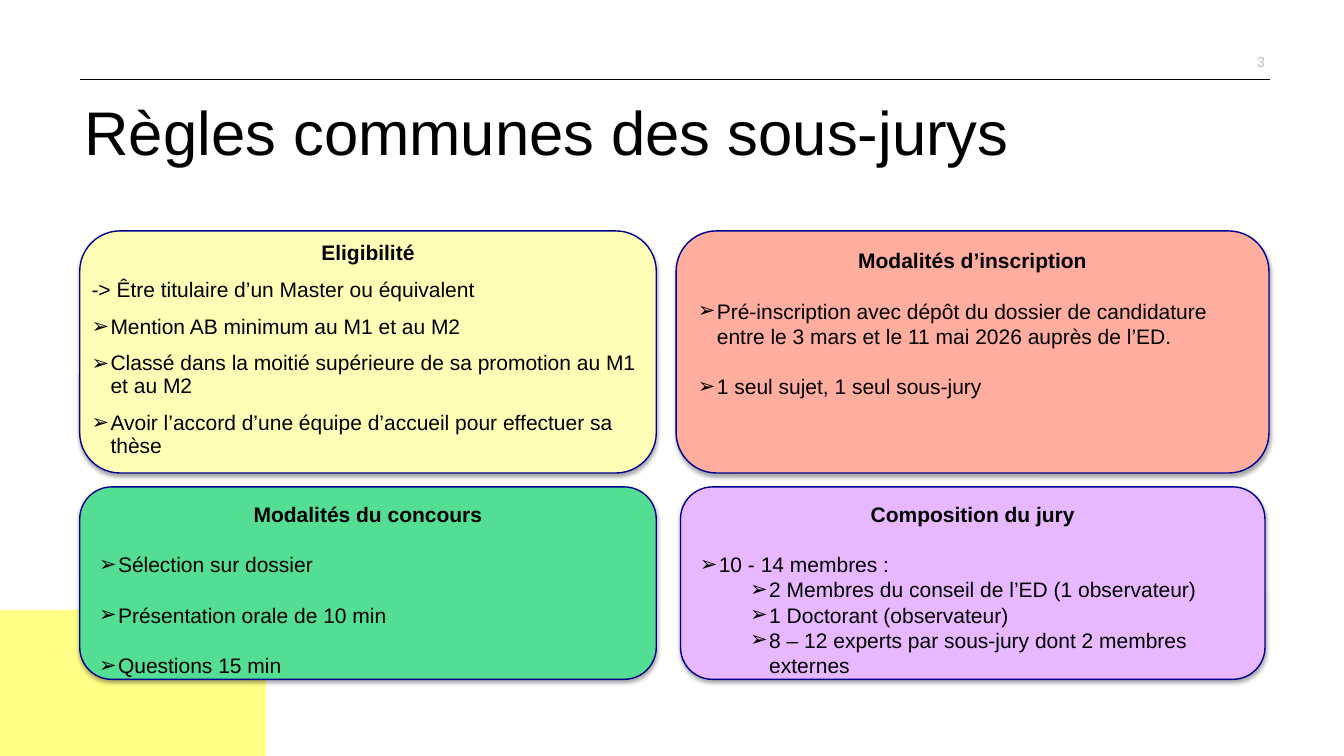
from lxml import etree
from pptx import Presentation
from pptx.dml.color import RGBColor
from pptx.enum.shapes import MSO_CONNECTOR as CONNECTOR, MSO_SHAPE as SHAPE
from pptx.enum.text import MSO_ANCHOR as ANCHOR, MSO_AUTO_SIZE as AUTO_SIZE, PP_ALIGN as ALIGN
from pptx.oxml.ns import qn
from pptx.util import Cm, Pt

INDENT = 0.48
LEVEL_STEP = 1.27
BLANK_LINE = 18


def color(hex_string):
    return RGBColor.from_string(hex_string)


def apply(target, values):
    for name, value in values.items():
        setattr(target, name, value)


def add_child(parent, tag, **attributes):
    return etree.SubElement(parent, qn(tag), attributes)


class SlideBuilder:
    font = "Arial"
    ink = "000000"
    outline = "00008E"
    text_size = 15

    def __init__(self, presentation):
        self.slide = presentation.slides.add_slide(presentation.slide_layouts[1])
        self.shapes = self.slide.shapes

    def place(self, shape, box):
        apply(shape, dict(zip(("left", "top", "width", "height"), map(Cm, box))))

    def frame(self, shape, inset=None, anchor=ANCHOR.TOP):
        frame = shape.text_frame
        apply(frame, dict(word_wrap=True, auto_size=AUTO_SIZE.NONE, vertical_anchor=anchor))
        if inset is not None:
            apply(frame, {f"margin_{side}": Cm(inset) for side in ("left", "top", "right", "bottom")})
        return frame

    def set_text(self, paragraph, text, size=text_size, ink=ink, bold=False,
                 align=ALIGN.LEFT, spacing=1.0, before=0):
        paragraph.text = text
        apply(paragraph, dict(alignment=align, line_spacing=spacing, space_before=Pt(before)))
        font = paragraph.runs[0].font
        apply(font, dict(name=self.font, size=Pt(size), bold=bold))
        font.color.rgb = color(ink)

    def bullet(self, paragraph, level):
        """Set the arrow bullet of a level, or none when level is None."""
        properties = paragraph._p.get_or_add_pPr()
        if level is None:
            properties.set("marL", "0")
            properties.set("indent", "0")
            add_child(properties, "a:buNone")
            return
        paragraph.level = level
        properties.set("marL", str(Cm(INDENT + level * LEVEL_STEP)))
        properties.set("indent", str(-Cm(INDENT)))
        add_child(properties, "a:buFont", typeface=self.font)
        add_child(properties, "a:buChar", char="➢")

    def title(self, text, box):
        shape = self.shapes.title
        self.place(shape, box)
        self.set_text(self.frame(shape, 0).paragraphs[0], text, size=44, spacing=0.9)

    def page_number(self, text, box):
        frame = self.frame(self.shapes.add_textbox(*map(Cm, box)), 0, ANCHOR.MIDDLE)
        self.set_text(frame.paragraphs[0], text, size=10.5, ink="BFBFBF", align=ALIGN.RIGHT)

    def rule(self, left, right, top):
        line = self.shapes.add_connector(CONNECTOR.STRAIGHT, Cm(left), Cm(top), Cm(right), Cm(top))
        line.line.color.rgb = color(self.ink)
        line.line.width = Pt(0.75)
        add_child(line._element.spPr, "a:effectLst")

    def block(self, box, fill):
        shape = self.shapes.add_shape(SHAPE.RECTANGLE, *map(Cm, box))
        shape.shadow.inherit = False
        shape.fill.solid()
        shape.fill.fore_color.rgb = color(fill)
        shape.line.fill.background()

    def decorate(self, shape, fill):
        shape.fill.solid()
        shape.fill.fore_color.rgb = color(fill)
        shape.line.color.rgb = color(self.outline)
        shape.line.width = Pt(1)
        shape.shadow.inherit = False
        effects = shape._element.spPr.find(qn("a:effectLst"))
        shadow = add_child(effects, "a:outerShdw", blurRad=str(Pt(3.1)), dist=str(Pt(1.8)),
                           dir="5400000", rotWithShape="0")
        add_child(add_child(shadow, "a:srgbClr", val="000000"), "a:alpha", val="35000")

    def card(self, box, fill, heading, items, spacing=1.0, inset=None):
        """Add a rounded card, in the body placeholder when inset is given.

        Each item is (text, bullet level, space before).
        """
        if inset is None:
            shape = self.shapes.add_shape(SHAPE.ROUNDED_RECTANGLE, *map(Cm, box))
        else:
            shape = self.slide.placeholders[1]
            self.place(shape, box)
            geometry = add_child(shape._element.spPr, "a:prstGeom", prst="roundRect")
            add_child(geometry, "a:avLst")
        self.decorate(shape, fill)
        frame = self.frame(shape, inset)
        self.bullet(frame.paragraphs[0], None)
        self.set_text(frame.paragraphs[0], heading, bold=True, align=ALIGN.CENTER, spacing=spacing)
        for text, level, before in items:
            paragraph = frame.add_paragraph()
            self.bullet(paragraph, level)
            self.set_text(paragraph, text, spacing=spacing, before=before)


def main():
    presentation = Presentation()
    apply(presentation, dict(slide_width=Cm(33.87), slide_height=Cm(19.05)))
    builder = SlideBuilder(presentation)
    left, upper, lower = 2.01, 5.82, 12.27
    left_width, upper_height, lower_height = 14.53, 6.1, 4.85

    builder.page_number("3", (24.26, 1.04, 7.62, 1.02))
    builder.rule(left, 32, 2.01)
    builder.block((0, 15.37, 6.71, 3.68), "FFFE85")
    builder.title("Règles communes des sous-jurys", (2.13, 2.57, 30, 1.96))
    builder.card((left, upper, left_width, upper_height), "FFFEB6", "Eligibilité", [
        ("-> Être titulaire d’un Master ou équivalent", None, 10),
        ("Mention AB minimum au M1 et au M2", 0, 10),
        ("Classé dans la moitié supérieure de sa promotion au M1 et au M2", 0, 10),
        ("Avoir l’accord d’une équipe d’accueil pour effectuer sa thèse", 0, 10),
    ], spacing=0.9, inset=0)
    builder.card((17.04, upper, 14.94, upper_height), "FFAD9E", "Modalités d’inscription", [
        ("Pré-inscription avec dépôt du dossier de candidature entre le 3 mars "
         "et le 11 mai 2026 auprès de l’ED.", 0, BLANK_LINE),
        ("1 seul sujet, 1 seul sous-jury", 0, BLANK_LINE),
    ])
    builder.card((left, lower, left_width, lower_height), "53DE94", "Modalités du concours", [
        ("Sélection sur dossier", 0, BLANK_LINE),
        ("Présentation orale de 10 min", 0, BLANK_LINE),
        ("Questions 15 min", 0, BLANK_LINE),
    ])
    builder.card((17.15, lower, 14.73, lower_height), "E7B7FF", "Composition du jury", [
        ("10 - 14 membres :", 0, BLANK_LINE),
        ("2 Membres du conseil de l’ED (1 observateur)", 1, 0),
        ("1 Doctorant (observateur)", 1, 0),
        ("8 – 12 experts par sous-jury dont 2 membres externes", 1, 0),
    ])
    presentation.save("out.pptx")


if __name__ == "__main__":
    main()
